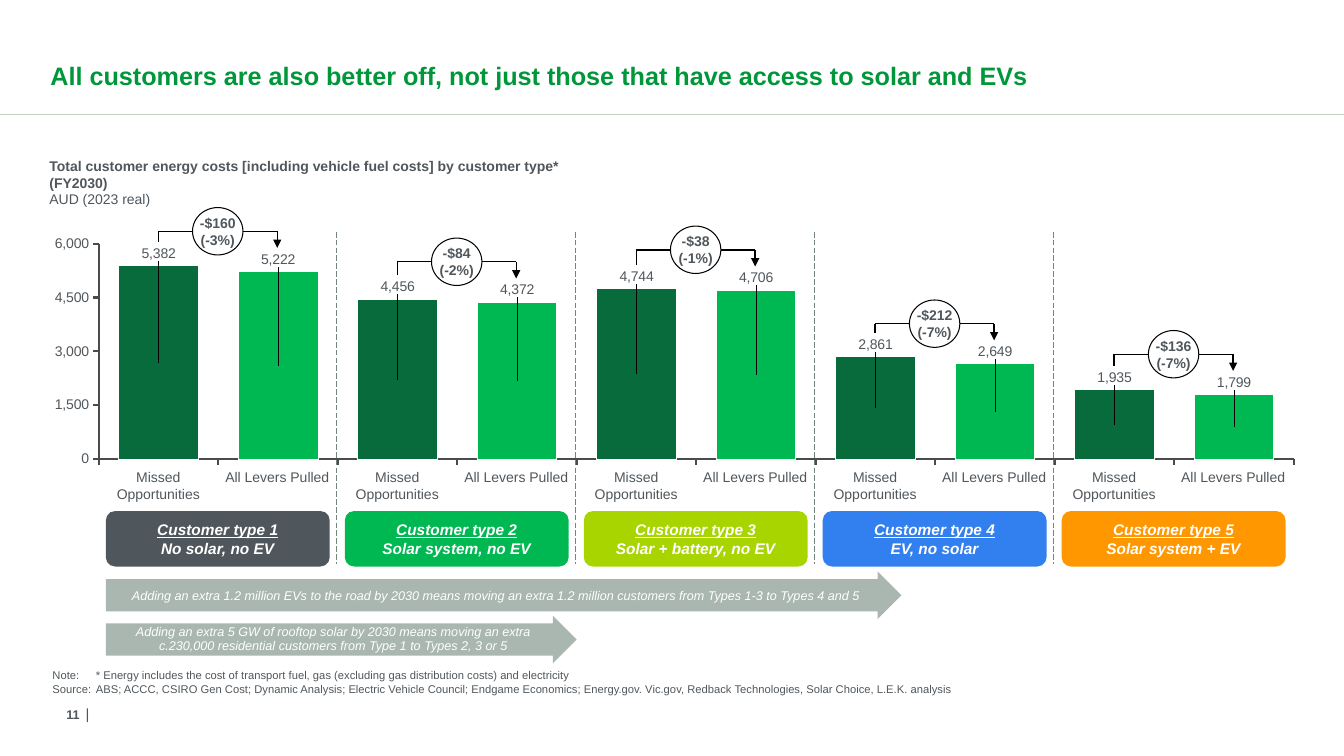
import dataclasses

import pptx
import pptx.chart.data
import pptx.dml.color
import pptx.enum.chart
import pptx.enum.dml
import pptx.enum.shapes
import pptx.enum.text
import pptx.oxml
import pptx.oxml.ns
import pptx.util
from pptx.util import Inches


@dataclasses.dataclass(frozen=True)
class Theme:
    """Colours and type sizes of the slide."""
    font: str = "Arial"
    title: str = "00973A"
    text: str = "50575C"
    white: str = "FFFFFF"
    black: str = "000000"
    axis: str = "4B4B4B"
    rule: str = "C4CFC2"
    divider: str = "71867C"
    arrow: str = "A9B7B0"
    missed: str = "076B3B"
    levers: str = "00B852"
    title_size: float = 18
    type_size: float = 11
    body_size: float = 10
    small_size: float = 9
    note_size: float = 8


THEME = Theme()
ANCHOR = pptx.enum.text.MSO_ANCHOR
ALIGN = pptx.enum.text.PP_ALIGN
PRESET = pptx.enum.shapes.MSO_SHAPE
CHART_BOX = (0.38, 2.17, 12.54, 2.63)
PLOT = {"x": 0.048, "y": 0.094, "w": 0.945, "h": 0.813}
AXIS_MAX = 6000
GROUP_LEFT, GROUP_WIDTH = 0.97, 2.37
BAR_CENTRES = (0.6, 1.78)
CUSTOMERS = [
    ("Customer type 1", "No solar, no EV", "50575C", (5382, 5222), "-$160\v(-3%)"),
    ("Customer type 2", "Solar system, no EV", "00B852", (4456, 4372), "-$84\v(-2%)"),
    ("Customer type 3", "Solar + battery, no EV", "A8D500", (4744, 4706), "-$38\v(-1%)"),
    ("Customer type 4", "EV, no solar", "327FEF", (2861, 2649), "-$212\v(-7%)"),
    ("Customer type 5", "Solar system + EV", "FF9800", (1935, 1799), "-$136\v(-7%)"),
]


def rgb(value):
    """Turn a hex string into a colour."""
    return pptx.dml.color.RGBColor.from_string(value)


def set_font(font, size, color, bold=False, italic=False):
    """Apply the theme typeface with a size and colour."""
    font.name, font.size = THEME.font, pptx.util.Pt(size)
    font.color.rgb = rgb(color)
    font.bold, font.italic = bold, italic


def write(shape, lines, size, color, align=ALIGN.LEFT, anchor=ANCHOR.TOP,
          side=0, bold=False, italic=False):
    """Fill a shape with one paragraph per line and return the paragraphs."""
    frame = shape.text_frame
    frame.word_wrap, frame.vertical_anchor = True, anchor
    frame.margin_left = frame.margin_right = Inches(side)
    frame.margin_top = frame.margin_bottom = 0
    frame.text = "\n".join(lines)
    for paragraph in frame.paragraphs:
        paragraph.alignment = align
        set_font(paragraph.font, size, color, bold, italic)
    return frame.paragraphs


def add_text(slide, box, lines, size, color=THEME.text, **style):
    """Place plain text in a box."""
    return write(slide.shapes.add_textbox(*map(Inches, box)), lines, size, color, **style)


def add_filled(slide, preset, box, fill, outline=None):
    """Place a preset shape with a flat fill and optional outline."""
    shape = slide.shapes.add_shape(preset, *map(Inches, box))
    shape.shadow.inherit = False
    shape.fill.solid()
    shape.fill.fore_color.rgb = rgb(fill)
    if outline:
        shape.line.color.rgb = rgb(outline)
        shape.line.width = pptx.util.Pt(0.75)
    else:
        shape.line.fill.background()
    return shape


def add_line(slide, start, end, color, width, dash=None, arrow=False):
    """Draw a straight line, dashed or with an arrowhead on request."""
    line = slide.shapes.add_connector(
        pptx.enum.shapes.MSO_CONNECTOR.STRAIGHT, *map(Inches, (*start, *end)))
    line.line.color.rgb = rgb(color)
    line.line.width = pptx.util.Pt(width)
    if dash:
        line.line.dash_style = dash
    if arrow:
        pptx.oxml.ns.qn("a:tailEnd")
        head = pptx.oxml.parse_xml(f'<a:tailEnd {pptx.oxml.ns.nsdecls("a")} type="triangle"/>')
        line.get_or_add_ln().append(head)
    effects = pptx.oxml.parse_xml(f'<a:effectLst {pptx.oxml.ns.nsdecls("a")}/>')
    line._element.spPr.append(effects)


def bar_height(value):
    """Return the drawn height of a bar in inches."""
    return value / AXIS_MAX * PLOT["h"] * CHART_BOX[3]


def lift_labels(series, values):
    """Move every value label from the middle of its bar to just above it."""
    names = pptx.oxml.ns.nsdecls("c")
    labels = series.data_labels
    labels.show_value = True
    labels.number_format, labels.number_format_is_linked = "#,##0", False
    flags = "".join(f'<c:{flag} val="{int(flag == "showVal")}"/>' for flag in (
        "showLegendKey", "showVal", "showCatName", "showSerName", "showPercent", "showBubbleSize"))
    for index, value in enumerate(values):
        offset = -(bar_height(value) / 2 + 0.12) / CHART_BOX[3]
        labels._element.insert(index, pptx.oxml.parse_xml(
            f'<c:dLbl {names}><c:idx val="{index}"/><c:layout><c:manualLayout>'
            f'<c:x val="0"/><c:y val="{offset:.4f}"/></c:manualLayout></c:layout>'
            f'<c:numFmt formatCode="#,##0" sourceLinked="0"/>{flags}</c:dLbl>'))
    labels._element.append(pptx.oxml.parse_xml(
        f'<c:extLst {names}><c:ext uri="{{CE6537A1-D6FC-4f65-9D91-7224C49458BB}}" '
        'xmlns:c15="http://schemas.microsoft.com/office/drawing/2012/chart">'
        '<c15:showLeaderLines val="1"/></c:ext></c:extLst>'))


def add_cost_chart(slide, box):
    """Chart the energy costs, two bars for each customer type."""
    values = [cost for customer in CUSTOMERS for cost in customer[3]]
    data = pptx.chart.data.CategoryChartData()
    data.categories = [str(number + 1) for number in range(len(values))]
    data.add_series("Series 1", values)
    chart = slide.shapes.add_chart(
        pptx.enum.chart.XL_CHART_TYPE.COLUMN_STACKED, *map(Inches, box), data).chart
    chart.has_legend = chart.has_title = False
    set_font(chart.font, THEME.body_size, THEME.text)
    plot = chart.plots[0]
    plot.gap_width, plot.overlap, plot.vary_by_categories = 50, 100, False
    costs, scale = chart.value_axis, chart.category_axis
    costs.minimum_scale, costs.maximum_scale, costs.major_unit = 0, AXIS_MAX, 1500
    costs.has_major_gridlines = False
    costs.tick_labels.number_format = "#,##0"
    costs.tick_labels.number_format_is_linked = False
    scale.tick_label_position = pptx.enum.chart.XL_TICK_LABEL_POSITION.NONE
    for axis in (costs, scale):
        axis.major_tick_mark = pptx.enum.chart.XL_TICK_MARK.OUTSIDE
        axis.format.line.color.rgb = rgb(THEME.axis)
        axis.format.line.width = pptx.util.Pt(1.5)
    series = plot.series[0]
    series.invert_if_negative = False
    levers = [series.points[index] for index in range(1, len(values), 2)]
    for part, color in [(series, THEME.missed)] + [(bar, THEME.levers) for bar in levers]:
        part.format.fill.solid()
        part.format.fill.fore_color.rgb = rgb(color)
        part.format.line.color.rgb = rgb(THEME.white)
        part.format.line.width = pptx.util.Pt(0.75)
    lift_labels(series, values)
    area = chart._chartSpace.chart.plotArea
    for layout in area.findall(pptx.oxml.ns.qn("c:layout")):
        area.remove(layout)
    sizes = "".join(f'<c:{side} val="{share}"/>' for side, share in PLOT.items())
    area.insert(0, pptx.oxml.parse_xml(
        f'<c:layout {pptx.oxml.ns.nsdecls("c")}><c:manualLayout><c:layoutTarget val="inner"/>'
        f'<c:xMode val="edge"/><c:yMode val="edge"/>{sizes}</c:manualLayout></c:layout>'))


def add_saving(slide, left, costs, saving):
    """Bracket two bars and show the saving in a circle."""
    base = CHART_BOX[1] + (PLOT["y"] + PLOT["h"]) * CHART_BOX[3]
    start, end = (left + centre for centre in BAR_CENTRES)
    start_top, end_top = (base - bar_height(cost) - 0.235 for cost in costs)
    level = end_top - 0.165
    add_line(slide, (start, start_top), (start, level), THEME.black, 1)
    add_line(slide, (start, level), (end, level), THEME.black, 1)
    add_line(slide, (end, level), (end, end_top), THEME.black, 1, arrow=True)
    circle = add_filled(slide, PRESET.OVAL, ((start + end) / 2 - 0.25, level - 0.235, 0.5, 0.47),
                        THEME.white, THEME.black)
    write(circle, [saving], THEME.body_size, THEME.text, ALIGN.CENTER, ANCHOR.MIDDLE, bold=True)
    circle.text_frame.word_wrap = False


def add_customer(slide, left, customer):
    """Place the bar names, saving and coloured card of a customer type."""
    name, equipment, color, costs, saving = customer
    for centre, label in zip(BAR_CENTRES, ("Missed Opportunities", "All Levers Pulled")):
        add_text(slide, (left + centre - 0.55, 4.65, 1.1, 0.33), [label],
                 THEME.body_size, align=ALIGN.CENTER)
    add_saving(slide, left, costs, saving)
    card = add_filled(slide, PRESET.ROUNDED_RECTANGLE, (left + 0.08, 5.07, 2.22, 0.55), color)
    heading = write(card, [name, equipment], THEME.type_size, THEME.white, ALIGN.CENTER,
                    ANCHOR.MIDDLE, 0.04, bold=True, italic=True)[0]
    heading.font.underline = True


def add_shift_arrow(slide, box, message, spacing):
    """Place a wide arrow that explains a shift between customer types."""
    arrow = add_filled(slide, PRESET.RIGHT_ARROW, box, THEME.arrow)
    arrow.adjustments[0], arrow.adjustments[1] = 0.68, 0.5
    write(arrow, [message], THEME.small_size, THEME.white, ALIGN.CENTER, ANCHOR.MIDDLE,
          0.04, italic=True)[0].line_spacing = spacing


def add_header(slide):
    """Place the title, its rule and the chart heading."""
    add_line(slide, (0, 1.13), (13.33, 1.13), THEME.rule, 0.5)
    add_text(slide, (0.5, 0.11, 12.32, 0.79),
             ["All customers are also better off, not just those that have access to solar and EVs"],
             THEME.title_size, THEME.title, anchor=ANCHOR.BOTTOM, bold=True)
    heading = add_text(slide, (0.49, 1.56, 5.3, 0.5), [
        "Total customer energy costs [including vehicle fuel costs] by customer type*",
        "(FY2030)", "AUD (2023 real)"], THEME.body_size, bold=True)
    heading[2].font.bold = False


def add_footer(slide):
    """Place the notes and the page number."""
    notes = add_text(slide, (0.52, 6.64, 10.91, 0.26), [
        "Note:\t* Energy includes the cost of transport fuel, gas (excluding gas distribution costs) and electricity",
        "Source:\tABS; ACCC, CSIRO Gen Cost; Dynamic Analysis; Electric Vehicle Council; Endgame Economics; "
        "Energy.gov. Vic.gov, Redback Technologies, Solar Choice, L.E.K. analysis"],
        THEME.note_size, anchor=ANCHOR.BOTTOM)
    for note in notes:
        properties = note._p.get_or_add_pPr()
        properties.set("marL", str(Inches(0.43)))
        properties.set("indent", str(-Inches(0.43)))
    add_text(slide, (0.38, 6.99, 0.41, 0.19), ["11"], THEME.small_size,
             align=ALIGN.RIGHT, anchor=ANCHOR.MIDDLE, bold=True)
    add_text(slide, (0.85, 6.94, 0.89, 0.23), ["|"], 10.5, anchor=ANCHOR.BOTTOM)


def main():
    """Build the slide and save it."""
    deck = pptx.Presentation()
    deck.slide_width, deck.slide_height = Inches(13.33), Inches(7.5)
    slide = deck.slides.add_slide(deck.slide_layouts[6])
    add_header(slide)
    add_cost_chart(slide, CHART_BOX)
    for index, customer in enumerate(CUSTOMERS):
        left = GROUP_LEFT + index * GROUP_WIDTH
        add_customer(slide, left, customer)
        if index:
            add_line(slide, (left, 2.3), (left, 5.6), THEME.divider, 0.5,
                     pptx.enum.dml.MSO_LINE.LONG_DASH)
    add_shift_arrow(slide, (1.05, 5.67, 7.89, 0.47),
                    "Adding an extra 1.2 million EVs to the road by 2030 means moving an extra "
                    "1.2 million customers from Types 1-3 to Types 4 and 5", 1.0)
    add_shift_arrow(slide, (1.05, 6.11, 4.67, 0.47),
                    "Adding an extra 5 GW of rooftop solar by 2030 means moving an extra "
                    "c.230,000 residential customers from Type 1 to Types 2, 3 or 5", 0.9)
    add_footer(slide)
    deck.save("out.pptx")


if __name__ == "__main__":
    main()
